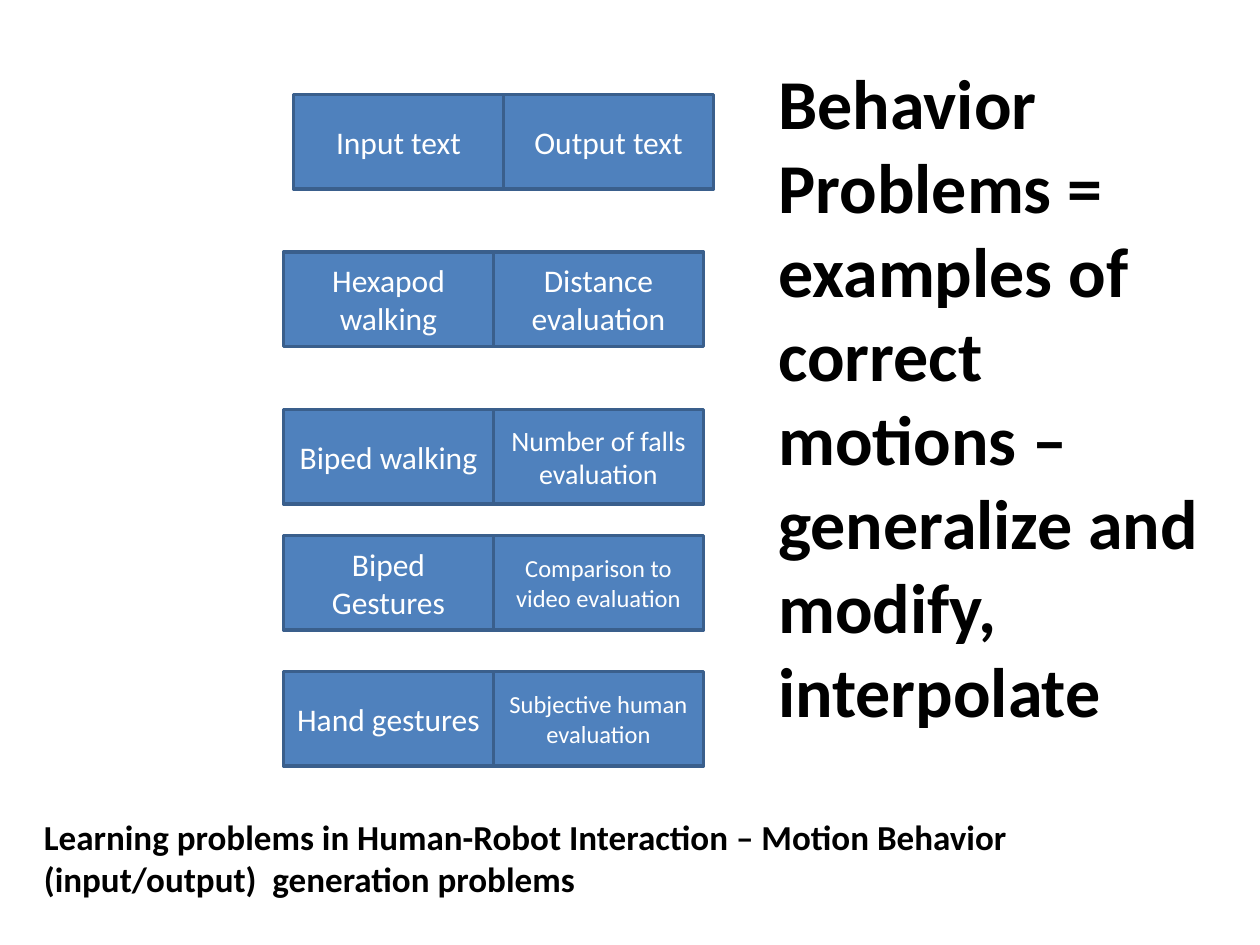
"""Build a slide of input/output pairs for motion behavior learning problems."""
from pptx import Presentation
from pptx.dml.color import RGBColor
from pptx.enum.shapes import MSO_SHAPE
from pptx.enum.text import MSO_ANCHOR, MSO_AUTO_SIZE, PP_ALIGN
from pptx.util import Inches, Pt

RECT = MSO_SHAPE.RECTANGLE
MIDDLE, TOP = MSO_ANCHOR.MIDDLE, MSO_ANCHOR.TOP
CENTER, LEFT = PP_ALIGN.CENTER, PP_ALIGN.LEFT
GROW = MSO_AUTO_SIZE.SHAPE_TO_FIT_TEXT

SLIDE_W, SLIDE_H = 10, 7.5
BOX_W, BOX_H = SLIDE_W / 6, SLIDE_H / 10
FILL, LINE, WHITE, BLACK = "4F81BD", "3A5F8C", "FFFFFF", "000000"

# Each row: left, top, input text, output text, output size
ROWS = [
    (2.33, 0.75, "Input text", "Output text", 18),
    (2.25, 2, "Hexapod walking", "Distance evaluation", 18),
    (2.25, 3.25, "Biped walking", "Number of falls\nevaluation", 16),
    (2.25, 4.25, "Biped Gestures", "Comparison to video evaluation", 14),
    (2.25, 5.33, "Hand gestures", "Subjective human evaluation", 14),
]
CAPTIONS = [
    ((0.25, 6.42, 9.42, 0.77), 20,
     "Learning problems in Human-Robot Interaction – Motion Behavior "
     "(input/output)  generation problems"),
    ((6.08, 0.42, 3.67, 5.49), 40,
     "Behavior  Problems = examples of correct motions – generalize and "
     "modify, interpolate"),
]


def rgb(value):
    return RGBColor.from_string(value)


def write(s, text, align, color, frame, font):
    tf = s.text_frame
    for name, value in {"word_wrap": True, **frame}.items():
        setattr(tf, name, value)
    tf.text = text
    for p in tf.paragraphs:
        p.alignment = align
        for r in p.runs:
            r.font.color.rgb = rgb(color)
            for name, value in {"name": "Calibri", **font}.items():
                setattr(r.font, name, value)


def add_box(slide, left, top, text, size):
    s = slide.shapes.add_shape(RECT, *map(Inches, (left, top, BOX_W, BOX_H)))
    s.shadow.inherit = False
    s.fill.solid()
    s.fill.fore_color.rgb = rgb(FILL)
    s.line.color.rgb = rgb(LINE)
    s.line.width = Pt(2)
    write(s, text, CENTER, WHITE, {"vertical_anchor": MIDDLE}, {"size": Pt(size)})


def add_caption(slide, place, size, text):
    s = slide.shapes.add_textbox(*map(Inches, place))
    write(s, text, LEFT, BLACK, {"vertical_anchor": TOP, "auto_size": GROW},
          {"size": Pt(size), "bold": True})


def main():
    prs = Presentation()
    prs.slide_width, prs.slide_height = Inches(SLIDE_W), Inches(SLIDE_H)
    slide = prs.slides.add_slide(prs.slide_layouts[6])
    for left, top, source, result, size in ROWS:
        add_box(slide, left, top, source, 18)
        add_box(slide, left + BOX_W, top, result, size)
    for caption in CAPTIONS:
        add_caption(slide, *caption)
    prs.save("out.pptx")


if __name__ == "__main__":
    main()
